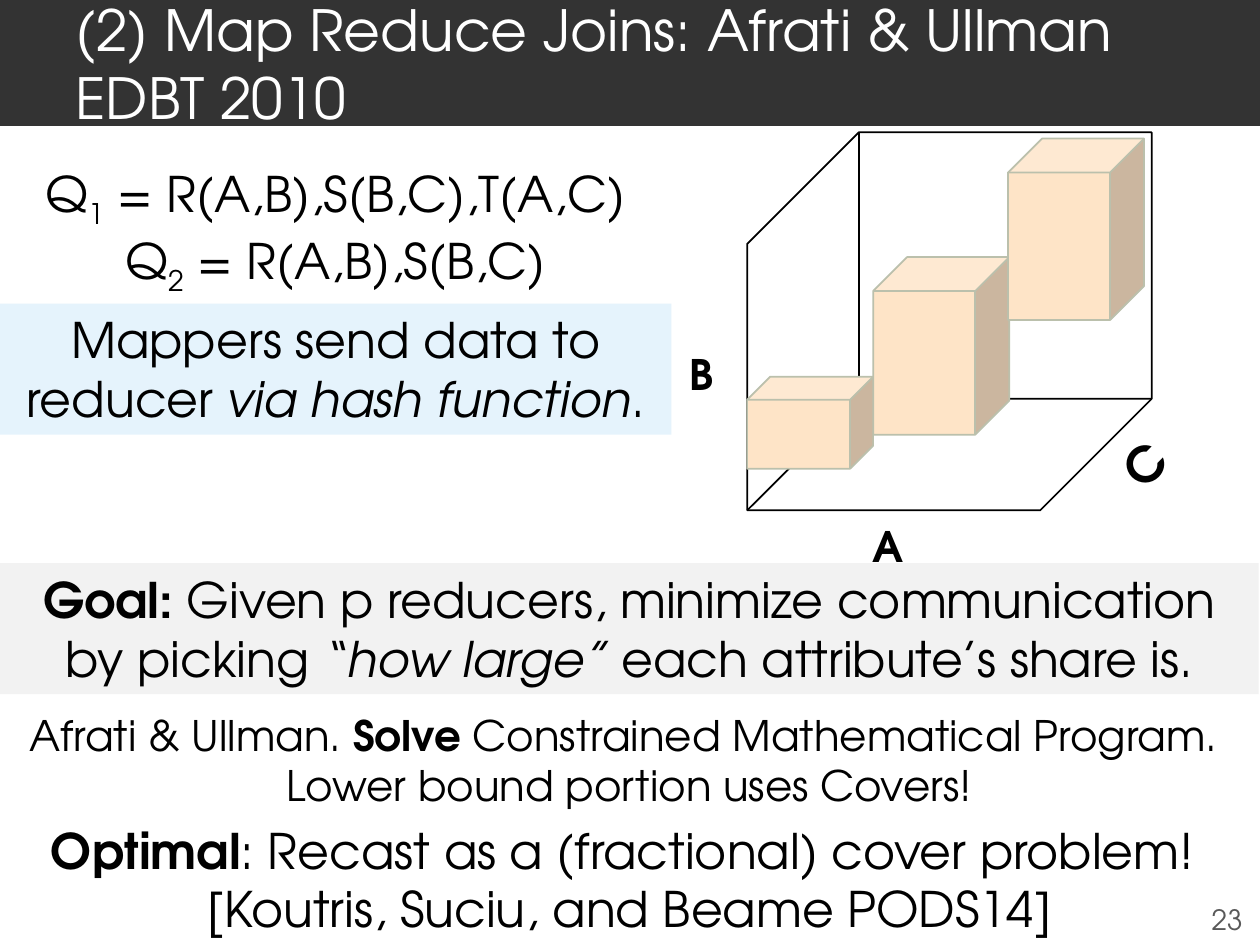
from pptx import Presentation
from pptx.dml.color import RGBColor
from pptx.enum.shapes import MSO_SHAPE as Shape
from pptx.enum.text import MSO_ANCHOR as Anchor, PP_ALIGN as Align
from pptx.util import Inches, Pt

FONT = "TeX Gyre Adventor"
BOLD = {"bold": True}
ITALIC = {"italic": True}
SUBSCRIPT = {"subscript": True}


def color(hex_value):
    return RGBColor.from_string(hex_value)


def write(frame, paragraphs, size, ink="000000", align=Align.CENTER, anchor=Anchor.TOP):
    """Fill a frame; each paragraph is a list of (text, format) runs."""
    frame.word_wrap = True
    frame.vertical_anchor = anchor
    for index, runs in enumerate(paragraphs):
        paragraph = frame.paragraphs[0] if index == 0 else frame.add_paragraph()
        paragraph.alignment = align
        for text, style in runs:
            run = paragraph.add_run()
            run.text = text
            run.font.color.rgb = color(ink)
            formats = {"name": FONT, "size": Pt(size), **style}
            if formats.pop("subscript", False):
                run.font._element.set("baseline", "-25000")
            for attribute, value in formats.items():
                setattr(run.font, attribute, value)


def add_text(slide, box, paragraphs, size, rotation=0, **options):
    label = slide.shapes.add_textbox(*map(Inches, box))
    label.rotation = rotation
    write(label.text_frame, paragraphs, size, **options)


def add_band(slide, box, fill, paragraphs, size, **options):
    band = slide.shapes.add_shape(Shape.RECTANGLE, *map(Inches, box))
    band.shadow.inherit = False
    band.fill.solid()
    band.fill.fore_color.rgb = color(fill)
    band.line.fill.background()
    write(band.text_frame, paragraphs, size, **options)
    return band


def add_cube(slide, box, line, fill=None, depth=0.25, rotation=0):
    cube = slide.shapes.add_shape(Shape.CUBE, *map(Inches, box))
    cube.shadow.inherit = False
    cube.adjustments[0] = depth
    cube.rotation = rotation
    cube.line.color.rgb = color(line)
    cube.line.width = Pt(1)
    if fill:
        cube.fill.solid()
        cube.fill.fore_color.rgb = color(fill)
    else:
        cube.fill.background()


def add_title(slide):
    title = [[("(2) Map Reduce Joins: Afrati & Ullman EDBT 2010", {})]]
    band = add_band(slide, (0, 0, 10, 1), "333333", title, 32.4,
                    ink="FFFFFF", align=Align.LEFT, anchor=Anchor.MIDDLE)
    band.text_frame.margin_left = Inches(0.6)
    band.text_frame.margin_right = Inches(0.3)


def add_share_diagram(slide):
    """Attribute space A x B x C with the reducers' blocks along its diagonal."""
    add_cube(slide, (5.93, 1.05, 3.21, 3), "000000", depth=0.295, rotation=180)
    for block in ((6.93, 2.04, 1.08, 1.41), (5.93, 2.99, 1, 0.73), (8, 1.1, 1.08, 1.44)):
        add_cube(slide, block, "BBC0AC", fill="FEE4C7")
    axes = (
        ("A", (5.93, 4.08, 2.24, 0.5), 24, 0),
        ("B", (4.55, 2.72, 2.04, 0.5), 24, 0),
        ("C", (8.06, 3.4, 2.04, 0.57), 28, 314.5),
    )
    for name, box, size, rotation in axes:
        add_text(slide, box, [[(name, BOLD)]], size, rotation)


def add_statements(slide):
    queries = [
        [("Q", {}), (number, SUBSCRIPT), (body, {})]
        for number, body in (("1", " = R(A,B),S(B,C),T(A,C)"), ("2", " = R(A,B),S(B,C)"))
    ]
    add_text(slide, (0, 1.25, 5.33, 1.04), queries, 28)

    mappers = [[("Mappers send data to reducer ", {}), ("via hash function", ITALIC), (".", {})]]
    add_band(slide, (0, 2.41, 5.33, 1.04), "E5F3FC", mappers, 28)

    goal = [[
        ("Goal: ", BOLD),
        ("Given p reducers, minimize communication by picking ", {}),
        ("“how large” ", ITALIC),
        ("each attribute’s share is.", {}),
    ]]
    add_band(slide, (0, 4.47, 9.99, 1.04), "F2F2F2", goal, 28)

    method = [
        [("Afrati & Ullman. ", {}), ("Solve", BOLD),
         (" Constrained Mathematical Program. ", {})],
        [("Lower bound portion uses Covers!", {})],
    ]
    add_text(slide, (0, 5.58, 9.99, 0.91), method, 24)

    optimal = [
        [("Optimal", BOLD), (": Recast as a (fractional) cover problem! ", {})],
        [("[Koutris, Suciu, and Beame PODS14]", {})],
    ]
    add_text(slide, (0, 6.46, 9.99, 1.04), optimal, 28)


def main():
    deck = Presentation()
    deck.slide_width, deck.slide_height = Inches(10), Inches(7.5)
    slide = deck.slides.add_slide(deck.slide_layouts[6])
    add_title(slide)
    add_share_diagram(slide)
    add_statements(slide)
    add_text(slide, (9.49, 7.1, 0.5, 0.4), [[("23", {})]], 16,
             ink="595959", anchor=Anchor.MIDDLE)
    deck.save("out.pptx")


if __name__ == "__main__":
    main()
